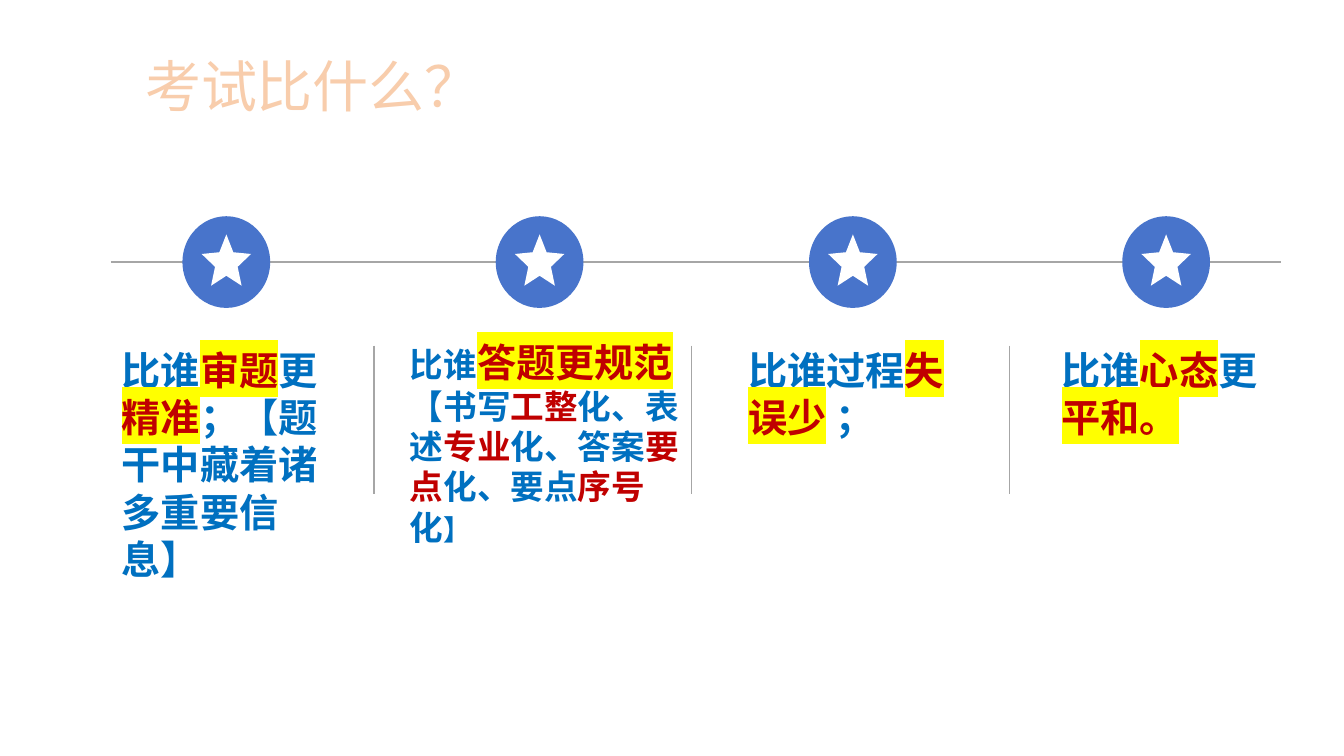
import pptx
import pptx.util
import pptx.dml.color
import pptx.enum.shapes
import pptx.oxml.ns
import lxml.etree

SLIDE_W, SLIDE_H = 13.33, 7.5
COLORS = {"title": "F8CDAC", "title_edge": "EE822F", "rule": "A6A6A6", "badge": "4874CB",
          "star": "FFFFFF", "plain": "0070C0", "key": "C00000", "marker": "FFFF00"}
TITLE_FONT, BODY_FONT = "Noto Sans CJK JP", "Noto Sans CJK SC"
COLUMN_STEP, DIVIDER_STEP = 3.107, 3.15
BADGE_W, BADGE_H = 0.87, 0.91
STAR_W, STAR_H = 0.49, 0.51
SHAPES = pptx.enum.shapes.MSO_SHAPE

# Each point: caption box (offset from its column, width, height), default size,
# runs of (text, style[, size]); "marked" is key text on a highlighter stroke.
CAPTION_BOX = (0, 0, 2.26, 1.04)
POINTS = [
    (CAPTION_BOX, 28, [("比谁", "plain"), ("审题", "marked"), ("更", "plain"),
                       ("精准", "marked"), ("；【题干中藏着诸多重要信息】", "plain")]),
    ((-0.25, -0.08, 2.91, 3), 24,
     [("比谁", "plain"), ("答题更规范", "marked", 28), ("【书写", "plain"), ("工整", "key"),
      ("化、表述", "plain"), ("专业", "key"), ("化、答案", "plain"), ("要点", "key"),
      ("化、要点", "plain"), ("序号", "key"), ("化", "plain"), ("】", "plain", 20)]),
    (CAPTION_BOX, 28, [("比谁过程", "plain"), ("失误少", "marked"), (" ；", "plain")]),
    (CAPTION_BOX, 28, [("比谁", "plain"), ("心态", "marked"), ("更", "plain"),
                       ("平和。", "marked")]),
]


def inches(*lengths):
    return [pptx.util.Inches(length) for length in lengths]


def rgb(name):
    return pptx.dml.color.RGBColor.from_string(COLORS[name])


def solid(parent, tag, color):
    """Append a DrawingML element holding one sRGB colour."""
    holder = lxml.etree.SubElement(parent, pptx.oxml.ns.qn(tag))
    lxml.etree.SubElement(holder, pptx.oxml.ns.qn("a:srgbClr"), val=COLORS[color])


def add_rule(group, x1, y1, x2, y2):
    rule = group.shapes.add_connector(pptx.enum.shapes.MSO_CONNECTOR.STRAIGHT,
                                      *inches(x1, y1, x2, y2))
    rule.line.color.rgb = rgb("rule")
    rule.line.width = pptx.util.Pt(1)
    lxml.etree.SubElement(rule._element.spPr, pptx.oxml.ns.qn("a:effectLst"))


def add_mark(group, preset, center_x, center_y, width, height, color):
    mark = group.shapes.add_shape(preset, *inches(center_x - width / 2, center_y - height / 2,
                                                  width, height))
    mark.shadow.inherit = False
    mark.fill.solid()
    mark.fill.fore_color.rgb = rgb(color)
    mark.line.fill.background()
    return mark


def add_paragraph_box(parent, box, font_name, bold):
    frame = parent.shapes.add_textbox(*inches(*box)).text_frame
    frame.word_wrap = True
    paragraph = frame.paragraphs[0]
    paragraph.font.name = font_name
    paragraph.font.bold = bold
    return paragraph


def add_run(paragraph, text, size, color):
    run = paragraph.add_run()
    run.text = text
    run.font.size = pptx.util.Pt(size)
    run.font.color.rgb = rgb(color)
    return run


def set_east_asian(run, font_name):
    lxml.etree.SubElement(run.font._element, pptx.oxml.ns.qn("a:ea"), typeface=font_name)


def add_title(slide, left, top, width, height):
    paragraph = add_paragraph_box(slide, (left, top, width, height), TITLE_FONT, False)
    run = add_run(paragraph, "考试比什么？", 40, "title")
    edge = lxml.etree.Element(pptx.oxml.ns.qn("a:ln"), w=str(pptx.util.Pt(1.75)))
    solid(edge, "a:solidFill", "title_edge")
    run.font._element.insert(0, edge)
    set_east_asian(run, TITLE_FONT)


def add_caption(group, box, size, runs):
    paragraph = add_paragraph_box(group, box, BODY_FONT, True)
    for text, style, *own_size in runs:
        color = "plain" if style == "plain" else "key"
        run = add_run(paragraph, text, own_size[0] if own_size else size, color)
        if style == "marked":
            solid(run.font._element, "a:highlight", "marker")
        set_east_asian(run, BODY_FONT)


def add_timeline(slide, left, top, width):
    """Rail with star badges, captions below and dividers between the columns."""
    group = slide.shapes.add_group_shape()
    rail_y = top + 0.46
    add_rule(group, left, rail_y, left + width, rail_y)
    for index, (caption_box, size, runs) in enumerate(POINTS):
        # Badge and star
        column = left + index * COLUMN_STEP
        center = column + 1.145
        add_mark(group, SHAPES.OVAL, center, rail_y, BADGE_W, BADGE_H, "badge")
        star = add_mark(group, SHAPES.STAR_5_POINT, center, rail_y - 0.02,
                        STAR_W, STAR_H, "star")
        star.adjustments[0] = 0.229
        # Caption
        dx, dy, caption_w, caption_h = caption_box
        add_caption(group, (column + 0.01 + dx, top + 1.25 + dy, caption_w, caption_h),
                    size, runs)
        # Divider to the next column
        if index < len(POINTS) - 1:
            divider_x = left + 2.61 + index * DIVIDER_STEP
            add_rule(group, divider_x, top + 1.29, divider_x, top + 2.76)


def main():
    deck = pptx.Presentation()
    deck.slide_width, deck.slide_height = inches(SLIDE_W, SLIDE_H)
    slide = deck.slides.add_slide(deck.slide_layouts[6])
    add_title(slide, 1.34, 0.46, 8.22, 0.77)
    add_timeline(slide, 1.1, 2.14, 11.61)
    deck.save("out.pptx")


if __name__ == "__main__":
    main()
